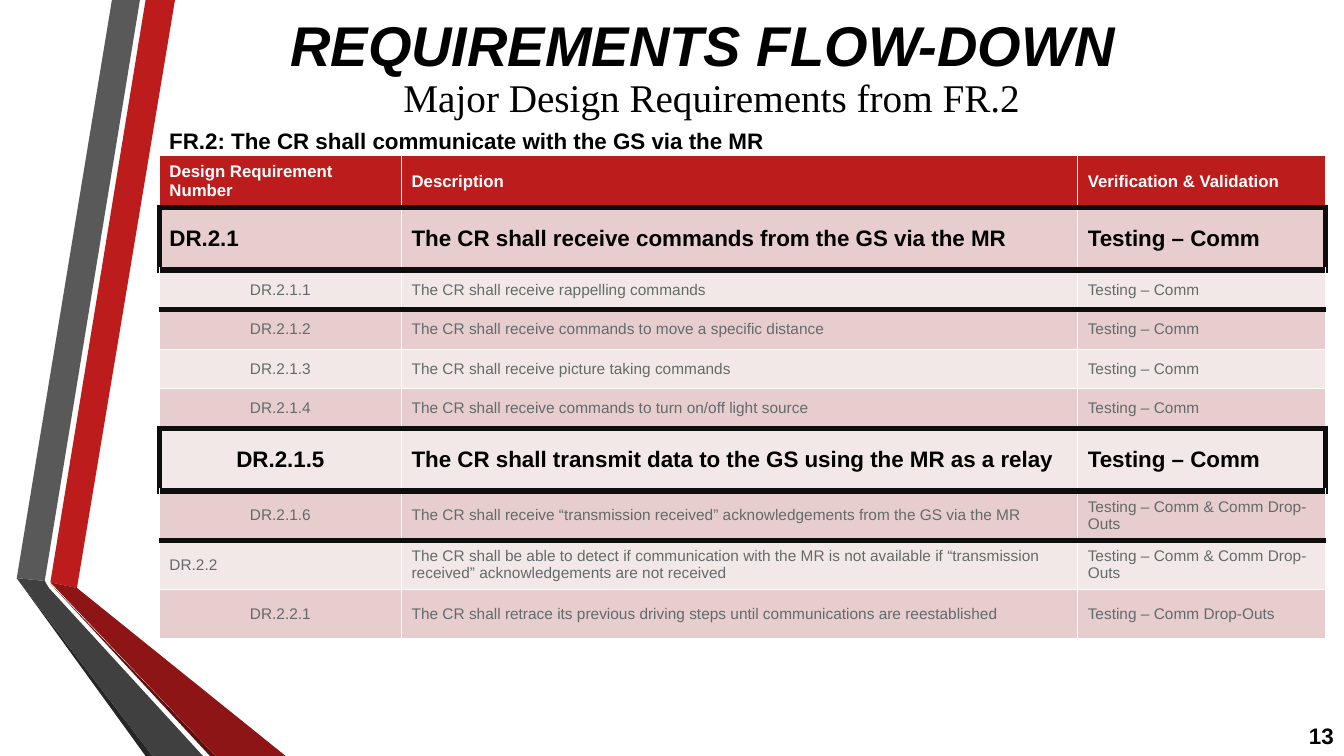
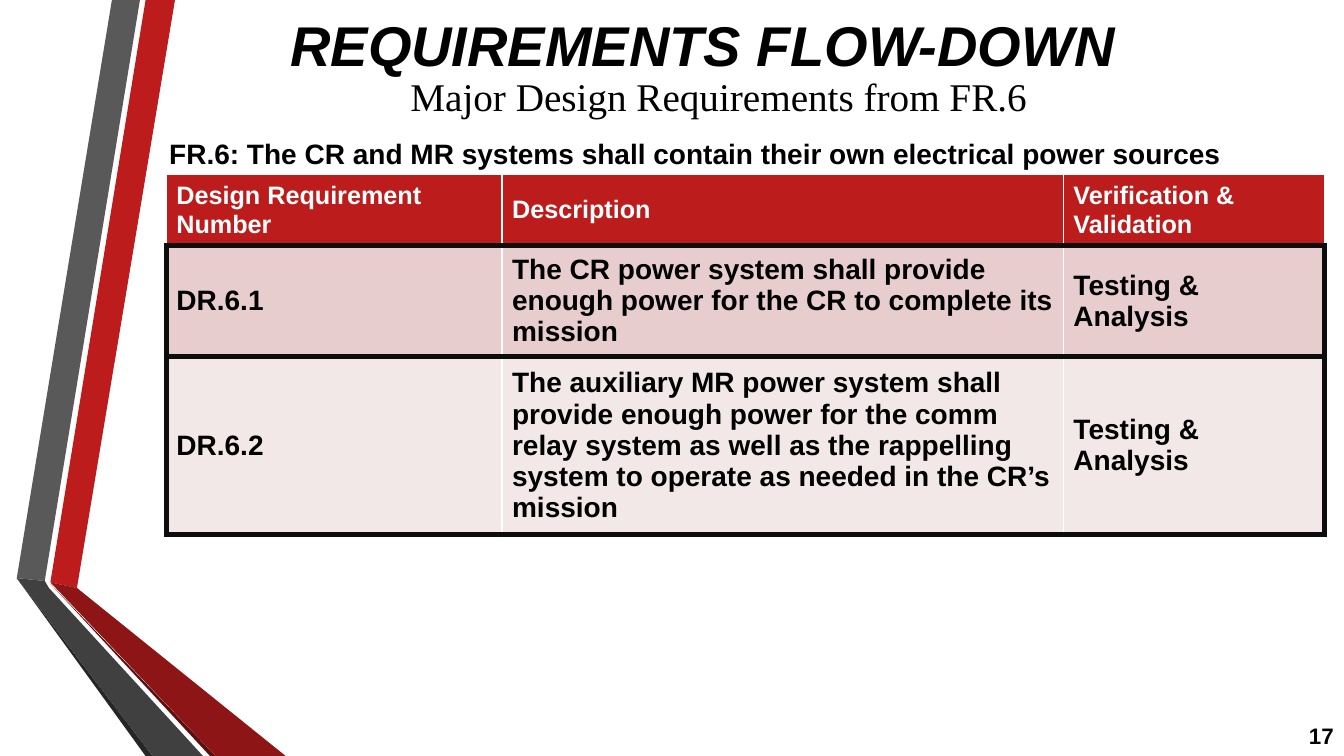
"""Build two requirements flow-down slides with a shared title, bands and table style."""
import lxml.etree
import pptx
import pptx.dml.color
import pptx.enum.text
import pptx.oxml.ns
import pptx.util

Pt = pptx.util.Pt
ALIGN = pptx.enum.text.PP_ALIGN
MIDDLE = pptx.enum.text.MSO_ANCHOR.MIDDLE

BLACK, WHITE, RED, GREY = "000000", "FFFFFF", "BC1C1C", "636A6C"
FRAME = "0D0D0D"
ROW_FILLS = ["F3E8E8", "E7CDCD"]
HEADINGS = ["Design Requirement Number", "Description", "Verification & Validation"]
BANDS = [
    (RED, [(36, 416.2), (55.4, 419.8), (124.6, 0), (104.4, 0)]),
    ("595959", [(100, 0), (79.9, 0), (11.5, 412.6), (31.7, 415.4)]),
    ("262626", [(11.5, 412.6), (104.4, 540), (108.7, 540)]),
    ("5E0E0E", [(36, 416.9), (149.8, 540), (154.1, 540)]),
    ("8D1515", [(36, 416.2), (154.1, 540), (203.8, 540), (55.4, 419.8)]),
    ("404040", [(145.4, 540), (34.6, 419.8), (31.7, 415.4), (11.5, 412.6), (108.7, 540)]),
]
SLIDES = [
    {
        "number": "13",
        "subtitle": "Major Design Requirements from FR.2",
        "subtitle_at": (113.8, 49),
        "requirement": "FR.2: The CR shall communicate with the GS via the MR",
        "requirement_top": 80,
        "table_at": (113.8, 110.9),
        "columns": [173, 483, 177],
        "heights": [37.4, 44.6, 28.3, 28.3, 28.3, 28.3, 44.6, 35.3, 35.3, 35.3],
        "heading_size": 12,
        "framed_size": 16,
        "framed": {1, 6},
        "rows": [
            ("DR.2.1", "The CR shall receive commands from the GS via the MR", "Testing – Comm"),
            ("DR.2.1.1", "The CR shall receive rappelling commands", "Testing – Comm"),
            ("DR.2.1.2", "The CR shall receive commands to move a specific distance", "Testing – Comm"),
            ("DR.2.1.3", "The CR shall receive picture taking commands", "Testing – Comm"),
            ("DR.2.1.4", "The CR shall receive commands to turn on/off light source", "Testing – Comm"),
            ("DR.2.1.5", "The CR shall transmit data to the GS using the MR as a relay", "Testing – Comm"),
            ("DR.2.1.6", "The CR shall receive “transmission received” acknowledgements from the GS via the MR",
             "Testing – Comm & Comm Drop-Outs"),
            ("DR.2.2", "The CR shall be able to detect if communication with the MR is not available if "
             "“transmission received” acknowledgements are not received", "Testing – Comm & Comm Drop-Outs"),
            ("DR.2.2.1", "The CR shall retrace its previous driving steps until communications are reestablished",
             "Testing – Comm Drop-Outs"),
        ],
    },
    {
        "number": "17",
        "subtitle": "Major Design Requirements from FR.6",
        "subtitle_at": (118.8, 48.2),
        "requirement": "FR.6: The CR and MR systems shall contain their own electrical power sources",
        "requirement_top": 89.3,
        "table_at": (118.8, 124.9),
        "columns": [239.8, 401, 186.5],
        "heights": [46.4, 74.3, 118.6],
        "heading_size": 18,
        "framed_size": 20,
        "framed": {1, 2},
        "rows": [
            ("DR.6.1", "The CR power system shall provide enough power for the CR to complete its mission",
             "Testing & Analysis"),
            ("DR.6.2", "The auxiliary MR power system shall provide enough power for the comm relay system as well "
             "as the rappelling system to operate as needed in the CR’s mission", "Testing & Analysis"),
        ],
    },
]


def colour(code):
    return pptx.dml.color.RGBColor.from_string(code)


def write(frame, text, size=16, font="Arial", color=BLACK, bold=True, italic=False, align=ALIGN.LEFT):
    frame.word_wrap = True
    para = frame.paragraphs[0]
    para.alignment = align
    span = para.add_run()
    span.text = text
    span.font.size = Pt(size)
    span.font.name = font
    span.font.bold = bold
    span.font.italic = italic
    span.font.color.rgb = colour(color)


deck = pptx.Presentation()
deck.slide_width, deck.slide_height = Pt(960), Pt(540)

for content in SLIDES:
    page = deck.slides.add_slide(deck.slide_layouts[6])

    for fill, points in BANDS:
        outline = page.shapes.build_freeform(*points[0], scale=Pt(1))
        outline.add_line_segments(points[1:], close=True)
        band = outline.convert_to_shape()
        band.shadow.inherit = False
        band.fill.solid()
        band.fill.fore_color.rgb = colour(fill)
        band.line.fill.background()

    rows = [HEADINGS, *content["rows"]]
    framed = content["framed"]
    heavy_below = {row + step for row in framed for step in (-1, 0, 1)}
    table = page.shapes.add_table(
        len(rows), len(HEADINGS), *map(Pt, content["table_at"]),
        Pt(sum(content["columns"])), Pt(sum(content["heights"]))).table
    for column, width in zip(table.columns, content["columns"]):
        column.width = Pt(width)
    for row, height in zip(table.rows, content["heights"]):
        row.height = Pt(height)

    for r, texts in enumerate(rows):
        if r == 0:
            style = {"size": content["heading_size"], "color": WHITE}
        elif r in framed:
            style = {"size": content["framed_size"]}
        else:
            style = {"size": 11, "color": GREY, "bold": False}
        for c, text in enumerate(texts):
            cell = table.cell(r, c)
            cell.vertical_anchor = MIDDLE
            nested = c == 0 and text.count(".") == 3
            write(cell.text_frame, text, align=ALIGN.CENTER if nested else ALIGN.LEFT, **style)
            edges = {
                "L": c == 0 and r in framed,
                "R": c == len(texts) - 1 and r in framed,
                "T": r - 1 in heavy_below,
                "B": r in heavy_below,
            }
            properties = cell._tc.get_or_add_tcPr()
            for side, heavy in edges.items():
                line = lxml.etree.SubElement(
                    properties, pptx.oxml.ns.qn("a:ln" + side), w=str(Pt(4.5 if heavy else 1)))
                solid = lxml.etree.SubElement(line, pptx.oxml.ns.qn("a:solidFill"))
                lxml.etree.SubElement(solid, pptx.oxml.ns.qn("a:srgbClr"), val=FRAME if heavy else WHITE)
            cell.fill.solid()
            cell.fill.fore_color.rgb = colour(ROW_FILLS[r % 2] if r else RED)

    labels = [
        ("REQUIREMENTS FLOW-DOWN", (107.5, 0, 789, 63.4), {"size": 40, "italic": True, "align": ALIGN.CENTER}),
        (content["subtitle"], (*content["subtitle_at"], 789, 41),
         {"size": 28, "font": "Times New Roman", "bold": False, "align": ALIGN.CENTER}),
        (content["requirement"], (113.8, content["requirement_top"], 789, 41), {"size": content["framed_size"]}),
        (content["number"], (916.6, 511.2, 43.2, 28.8), {"align": ALIGN.RIGHT}),
    ]
    for text, place, style in labels:
        box = page.shapes.add_textbox(*map(Pt, place))
        box.text_frame.vertical_anchor = MIDDLE
        write(box.text_frame, text, **style)

deck.save("out.pptx")
